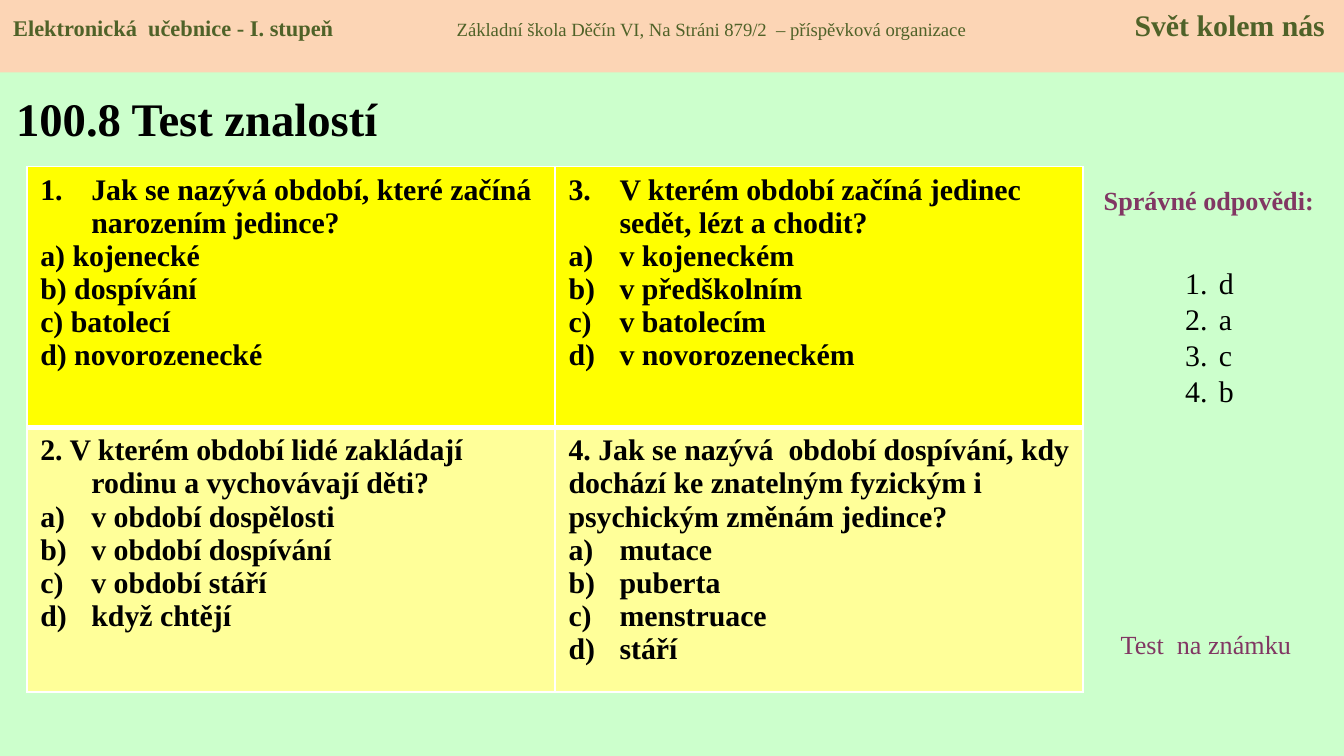
from lxml.etree import SubElement
from pptx import Presentation
from pptx.dml.color import RGBColor
from pptx.enum.shapes import MSO_SHAPE
from pptx.enum.text import MSO_ANCHOR, PP_ALIGN
from pptx.oxml.ns import qn
from pptx.util import Inches, Pt

COLORS = {
    "background": "CCFFCC",
    "header": "FCD5B5",
    "header_text": "4F6228",
    "accent": "813763",
    "text": "000000",
    "border": "FFFFFF",
    "top_row": "FFFF00",
    "bottom_row": "FFFF99",
}
FONT = "Times New Roman"
NUMBERS, LETTERS = "arabicPeriod", "alphaLcParenR"

# Each paragraph: text, numbering style, first number, hanging indent
QUESTIONS = [
    [
        [("Jak se nazývá období, které začíná narozením jedince?", NUMBERS, 1, 0.38)]
        + [(text, None, 1, 0) for text in
           ("a) kojenecké", "b) dospívání", "c) batolecí", "d) novorozenecké")],
        [("V kterém období začíná jedinec sedět, lézt a chodit?", NUMBERS, 3, 0.38)]
        + [(text, LETTERS, 1, 0.38) for text in
           ("v kojeneckém", "v předškolním", "v batolecím", "v novorozeneckém")],
    ],
    [
        [("2. V kterém období lidé zakládají rodinu a vychovávají děti?", None, 1, 0.38)]
        + [(text, LETTERS, 1, 0.38) for text in
           ("v období dospělosti", "v období dospívání", "v období stáří", "když chtějí")],
        [("4. Jak se nazývá  období dospívání, kdy dochází ke znatelným "
          "fyzickým i psychickým změnám jedince?", None, 1, 0)]
        + [(text, LETTERS, 1, 0.38) for text in
           ("mutace", "puberta", "menstruace", "stáří")],
    ],
]


def add_text(paragraph, text, size=16, color="text", bold=False):
    run = paragraph.add_run()
    run.text = text
    run.font.name = FONT
    run.font.size = Pt(size)
    run.font.bold = bold
    run.font.color.rgb = RGBColor.from_string(COLORS[color])


def set_list_style(paragraph, numbering, start, indent):
    properties = paragraph._p.get_or_add_pPr()
    if indent:
        properties.set("marL", str(Inches(indent)))
        properties.set("indent", str(-Inches(indent)))
    if numbering:
        bullet = SubElement(properties, qn("a:buAutoNum"), type=numbering)
        if start > 1:
            bullet.set("startAt", str(start))


def fill_list(text_frame, items, **text_format):
    for index, (text, numbering, start, indent) in enumerate(items):
        paragraph = text_frame.paragraphs[0] if index == 0 else text_frame.add_paragraph()
        set_list_style(paragraph, numbering, start, indent)
        add_text(paragraph, text, **text_format)


def add_text_box(slide, left, top, width, height):
    box = slide.shapes.add_textbox(Inches(left), Inches(top), Inches(width), Inches(height))
    box.text_frame.word_wrap = True
    return box.text_frame


def set_borders(cell, **widths):
    properties = cell._tc.get_or_add_tcPr()
    for side in "LRTB":
        line = SubElement(properties, qn(f"a:ln{side}"), w=str(Pt(widths.get(side, 1))))
        fill = SubElement(line, qn("a:solidFill"))
        SubElement(fill, qn("a:srgbClr"), val=COLORS["border"])


def add_title(slide):
    title = slide.shapes.title
    title.left, title.top = Inches(0.02), Inches(0.55)
    title.width, title.height = Inches(3.19), Inches(0.65)
    title.text_frame.vertical_anchor = MSO_ANCHOR.MIDDLE
    paragraph = title.text_frame.paragraphs[0]
    paragraph.alignment = PP_ALIGN.LEFT
    add_text(paragraph, "100.8 Test znalostí", size=25, bold=True)


def add_header(slide):
    header = slide.shapes.add_shape(MSO_SHAPE.RECTANGLE, 0, 0, Inches(10), Inches(0.54))
    header.shadow.inherit = False
    header.fill.solid()
    header.fill.fore_color.rgb = RGBColor.from_string(COLORS["header"])
    header.line.fill.background()
    header.text_frame.word_wrap = True
    header.text_frame.vertical_anchor = MSO_ANCHOR.TOP
    paragraph = header.text_frame.paragraphs[0]
    paragraph.alignment = PP_ALIGN.LEFT
    tabs = SubElement(paragraph._p.get_or_add_pPr(), qn("a:tabLst"))
    for position, alignment in ((3.3, "l"), (9.76, "r")):
        SubElement(tabs, qn("a:tab"), pos=str(Inches(position)), algn=alignment)
    add_text(paragraph, "Elektronická  učebnice - I. stupeň\t",
             size=12, color="header_text", bold=True)
    add_text(paragraph, "Základní škola Děčín VI, Na Stráni 879/2  – příspěvková organizace\t",
             size=10, color="header_text")
    add_text(paragraph, "Svět kolem nás", size=16, color="header_text", bold=True)


def add_question_table(slide):
    frame = slide.shapes.add_table(2, 2, Inches(0.2), Inches(1.24), Inches(7.86), Inches(3.91))
    table = frame.table
    for row, height in zip(table.rows, (1.94, 1.97)):
        row.height = Inches(height)
    row_styles = (("top_row", {"B": 3}), ("bottom_row", {"T": 3}))
    for row_index, (color, borders) in enumerate(row_styles):
        for column_index, items in enumerate(QUESTIONS[row_index]):
            cell = table.cell(row_index, column_index)
            set_borders(cell, **borders)
            cell.fill.solid()
            cell.fill.fore_color.rgb = RGBColor.from_string(COLORS[color])
            fill_list(cell.text_frame, items, bold=True)


def add_answers(slide):
    heading = add_text_box(slide, 8.05, 1.32, 1.89, 0.34).paragraphs[0]
    heading.alignment = PP_ALIGN.CENTER
    add_text(heading, "Správné odpovědi:", size=14, color="accent", bold=True)

    answers = add_text_box(slide, 8.72, 1.65, 0.55, 1.99)
    answers.margin_top = Inches(0.32)
    fill_list(answers, [(letter, NUMBERS, 1, 0.25) for letter in "dacb"])

    note = add_text_box(slide, 8.24, 4.63, 1.57, 0.34).paragraphs[0]
    add_text(note, "Test  na známku", size=14, color="accent")


def main():
    presentation = Presentation()
    # Widescreen, 16:9
    presentation.slide_width, presentation.slide_height = Inches(10), Inches(10 * 9 / 16)
    slide = presentation.slides.add_slide(presentation.slide_layouts[5])
    slide.background.fill.solid()
    slide.background.fill.fore_color.rgb = RGBColor.from_string(COLORS["background"])
    add_title(slide)
    add_question_table(slide)
    add_answers(slide)
    add_header(slide)
    presentation.save("out.pptx")


if __name__ == "__main__":
    main()
